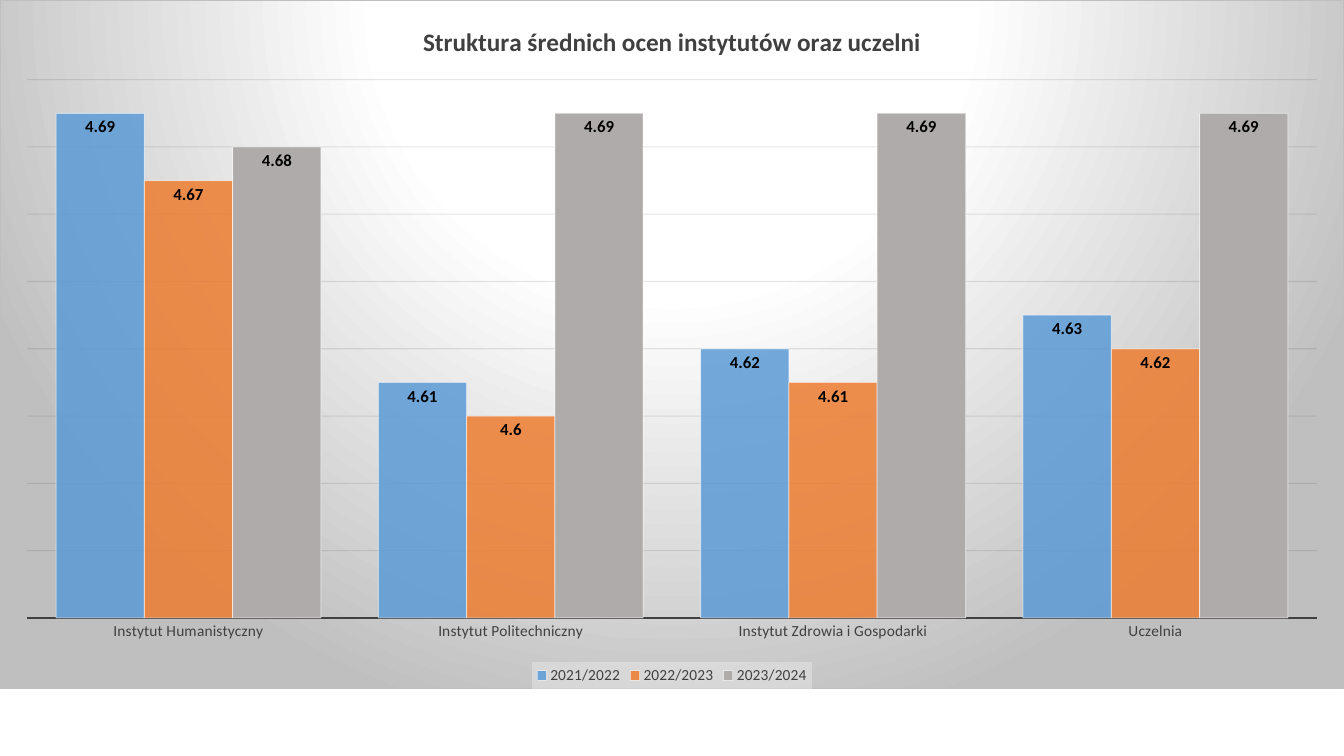
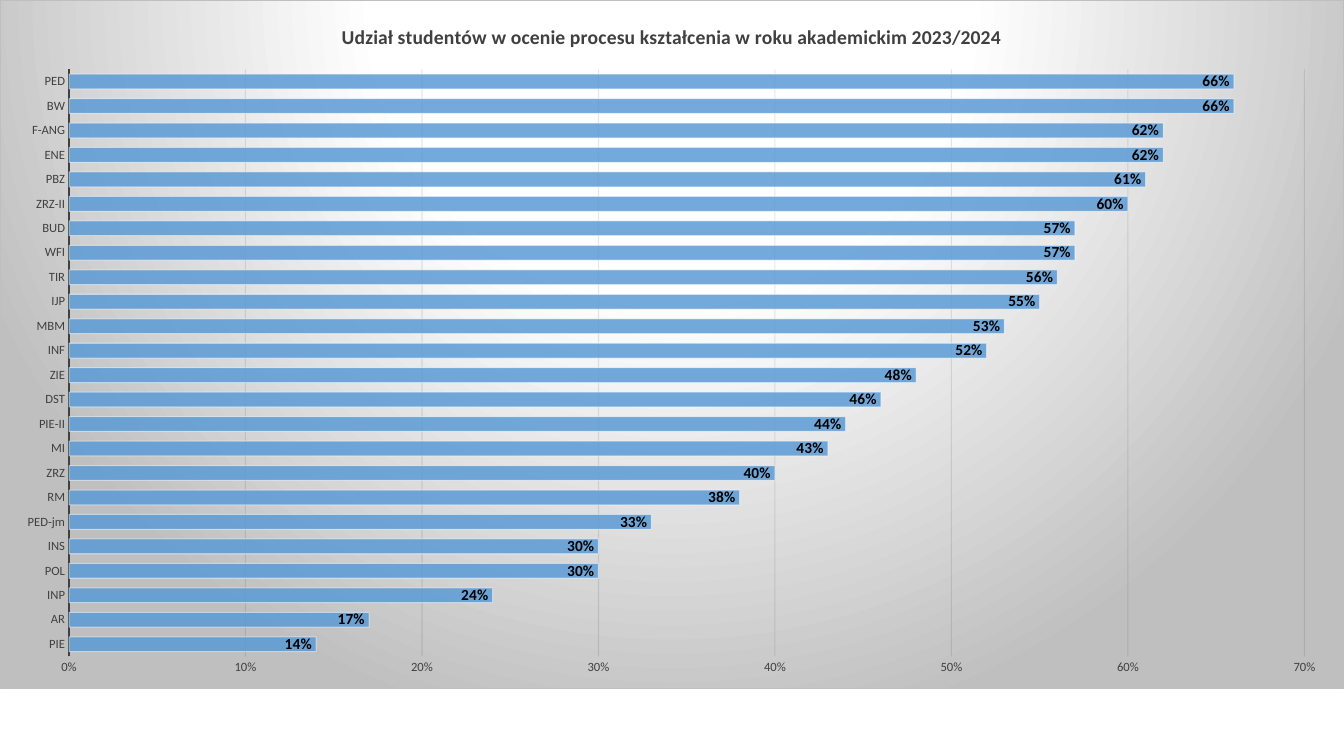
from lxml import etree
from pptx import Presentation
from pptx.chart.data import CategoryChartData
from pptx.dml.color import RGBColor
from pptx.enum.chart import XL_CHART_TYPE as ChartType
from pptx.enum.chart import XL_LABEL_POSITION as LabelPosition
from pptx.enum.chart import XL_LEGEND_POSITION as LegendPosition
from pptx.enum.chart import XL_TICK_MARK as TickMark
from pptx.oxml import parse_xml
from pptx.oxml.ns import nsdecls, qn
from pptx.util import Inches, Pt

FONT = "Calibri"
BLACK = RGBColor(0x00, 0x00, 0x00)
DARK = RGBColor(0x40, 0x40, 0x40)
GRID = RGBColor(0x0D, 0x0D, 0x0D)
WHITE = RGBColor(0xFF, 0xFF, 0xFF)
PALE = RGBColor(0xF2, 0xF2, 0xF2)
SILVER = RGBColor(0xBF, 0xBF, 0xBF)
BLUE = RGBColor(0x5B, 0x9B, 0xD5)
ORANGE = RGBColor(0xED, 0x7D, 0x31)
GREY = RGBColor(0xAF, 0xAB, 0xAB)

PAGE_WIDTH, PAGE_HEIGHT = Inches(13.33), Inches(7.5)
CHART_HEIGHT = Inches(6.84)

TURNOUT = [
    ("PIE", 0.14), ("AR", 0.17), ("INP", 0.24), ("POL", 0.3),
    ("INS", 0.3), ("PED-jm", 0.33), ("RM", 0.38), ("ZRZ", 0.4),
    ("MI", 0.43), ("PIE-II", 0.44), ("DST", 0.46), ("ZIE", 0.48),
    ("INF", 0.52), ("MBM", 0.53), ("IJP", 0.55), ("TIR", 0.56),
    ("WFI", 0.57), ("BUD", 0.57), ("ZRZ-II", 0.6), ("PBZ", 0.61),
    ("ENE", 0.62), ("F-ANG", 0.62), ("BW", 0.66), ("PED", 0.66),
]

CHARTS = [
    {
        "title": "Struktura średnich ocen instytutów oraz uczelni",
        "kind": ChartType.COLUMN_CLUSTERED,
        "categories": ["Instytut Humanistyczny", "Instytut Politechniczny",
                       "Instytut Zdrowia i Gospodarki", "Uczelnia"],
        "series": [
            ("2021/2022", [4.69, 4.61, 4.62, 4.63], BLUE, 85),
            ("2022/2023", [4.67, 4.6, 4.61, 4.62], ORANGE, 85),
            ("2023/2024", [4.68, 4.69, 4.69, 4.69], GREY, 100),
        ],
        "scale": (4.54, 4.7, 0.02),
        "format": "General",
        "sizes": {"title": 18, "axis": 11, "label": 12},
        "plot": {"x": 0.02, "y": 0.115, "w": 0.96, "h": 0.782},
        "values_shown": False,
        "legend": True,
    },
    {
        "title": "Udział studentów w ocenie procesu kształcenia "
                 "w roku akademickim 2023/2024",
        "kind": ChartType.BAR_CLUSTERED,
        "categories": [name for name, share in TURNOUT],
        "series": [("Series 1", [share for name, share in TURNOUT], BLUE, 85)],
        "scale": (0, 0.7, 0.1),
        "format": "0%",
        "sizes": {"title": 14, "axis": 9, "label": 11},
        "plot": {"x": 0.051, "y": 0.1, "w": 0.92, "h": 0.853},
        "values_shown": True,
        "legend": False,
    },
]


def set_font(font, size, colour, bold=False):
    font.name = FONT
    font.size = Pt(size)
    font.bold = bold
    font.color.rgb = colour


def set_line(line, colour, width):
    line.color.rgb = colour
    line.width = Pt(width)


def set_opacity(element, route, percent):
    for colour in element.xpath(route + "/a:solidFill/a:srgbClr"):
        etree.SubElement(colour, qn("a:alpha")).set("val", str(percent * 1000))


def add_background(chart):
    stops = "".join(
        f'<a:gs pos="{place * 1000}"><a:srgbClr val="{colour}"/></a:gs>'
        for place, colour in [(0, WHITE), (39, WHITE), (100, SILVER)])
    chart.element.find(qn("c:chart")).addnext(parse_xml(
        f'<c:spPr {nsdecls("c", "a")}><a:gradFill><a:gsLst>{stops}</a:gsLst>'
        '<a:path path="circle"><a:fillToRect l="50000" t="-80000" r="50000" '
        'b="180000"/></a:path></a:gradFill>'
        f'<a:ln w="{Pt(0.75)}"><a:solidFill><a:srgbClr val="{SILVER}"/>'
        '</a:solidFill></a:ln></c:spPr>'))


def place_plot(chart, shares):
    area = chart.element.find(qn("c:chart")).find(qn("c:plotArea"))
    for old in area.findall(qn("c:layout")):
        area.remove(old)
    modes = '<c:xMode val="edge"/><c:yMode val="edge"/>'
    sides = "".join(f'<c:{side} val="{share}"/>' for side, share in shares.items())
    area.insert(0, parse_xml(
        f'<c:layout {nsdecls("c")}><c:manualLayout><c:layoutTarget val="inner"/>'
        f'{modes}{sides}</c:manualLayout></c:layout>'))


def style_axes(chart, content):
    size = content["sizes"]["axis"]
    names, values = chart.category_axis, chart.value_axis
    for axis in (names, values):
        axis.major_tick_mark = axis.minor_tick_mark = TickMark.NONE
        set_font(axis.tick_labels.font, size, DARK)
    set_line(names.format.line, DARK, 1.5)
    values.format.line.fill.background()
    values.minimum_scale, values.maximum_scale, values.major_unit = content["scale"]
    values.tick_labels.number_format = content["format"]
    values.tick_labels.number_format_is_linked = False
    values.has_major_gridlines = True
    set_line(values.major_gridlines.format.line, GRID, 0.75)
    set_opacity(chart.element, ".//c:majorGridlines/c:spPr/a:ln", 10)
    values.visible = content["values_shown"]


def style_series(plot, content):
    plot.gap_width = 65
    plot.overlap = 0
    plot.vary_by_categories = False
    for series, (name, values, colour, opacity) in zip(plot.series, content["series"]):
        series.format.fill.solid()
        series.format.fill.fore_color.rgb = colour
        set_line(series.format.line, WHITE, 0.75)
        set_opacity(series._element, "c:spPr", opacity)
        set_opacity(series._element, "c:spPr/a:ln", 50)
        labels = series.data_labels
        labels.show_value = True
        labels.position = LabelPosition.INSIDE_END
        labels.number_format = content["format"]
        labels.number_format_is_linked = False
        set_font(labels.font, content["sizes"]["label"], BLACK, True)


def style_legend(chart, size):
    legend = chart.legend
    legend.position = LegendPosition.BOTTOM
    legend.include_in_layout = False
    set_font(legend.font, size, DARK)
    legend._element.find(qn("c:overlay")).addnext(parse_xml(
        f'<c:spPr {nsdecls("c", "a")}><a:solidFill><a:srgbClr val="{PALE}">'
        '<a:alpha val="39000"/></a:srgbClr></a:solidFill></c:spPr>'))


def add_chart_page(deck, content):
    page = deck.slides.add_slide(deck.slide_layouts[6])
    data = CategoryChartData(number_format=content["format"])
    data.categories = content["categories"]
    for name, values, colour, opacity in content["series"]:
        data.add_series(name, values)
    chart = page.shapes.add_chart(
        content["kind"], 0, 0, PAGE_WIDTH, CHART_HEIGHT, data).chart
    set_font(chart.font, 10, BLACK)
    add_background(chart)
    chart.has_title = True
    para = chart.chart_title.text_frame.paragraphs[0]
    para.text = content["title"]
    set_font(para.font, content["sizes"]["title"], DARK, True)
    chart.chart_title.include_in_layout = False
    style_axes(chart, content)
    style_series(chart.plots[0], content)
    chart.has_legend = content["legend"]
    if content["legend"]:
        style_legend(chart, content["sizes"]["axis"])
    place_plot(chart, content["plot"])


def main():
    deck = Presentation()
    deck.slide_width, deck.slide_height = PAGE_WIDTH, PAGE_HEIGHT
    for content in CHARTS:
        add_chart_page(deck, content)
    deck.save("out.pptx")


if __name__ == "__main__":
    main()
